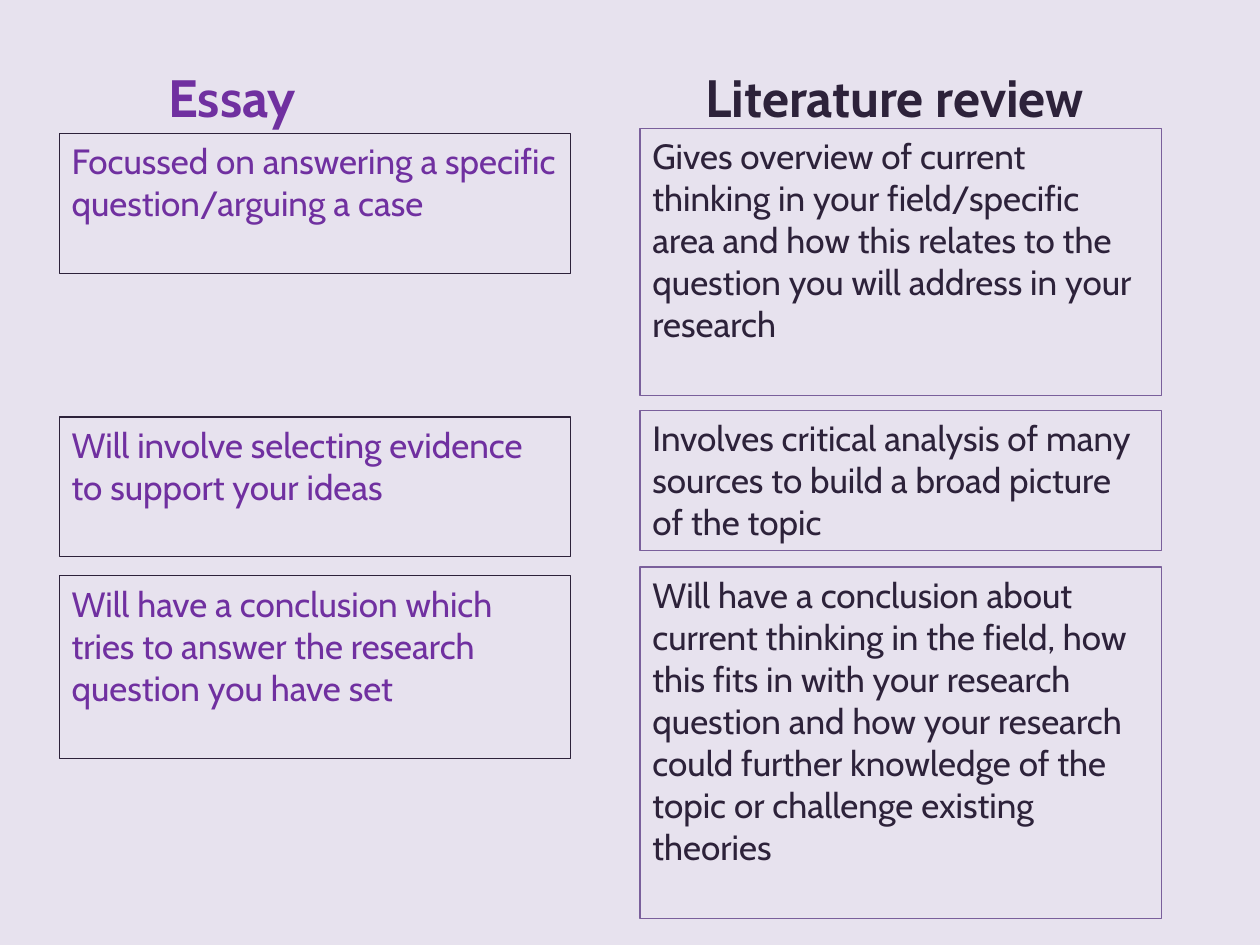
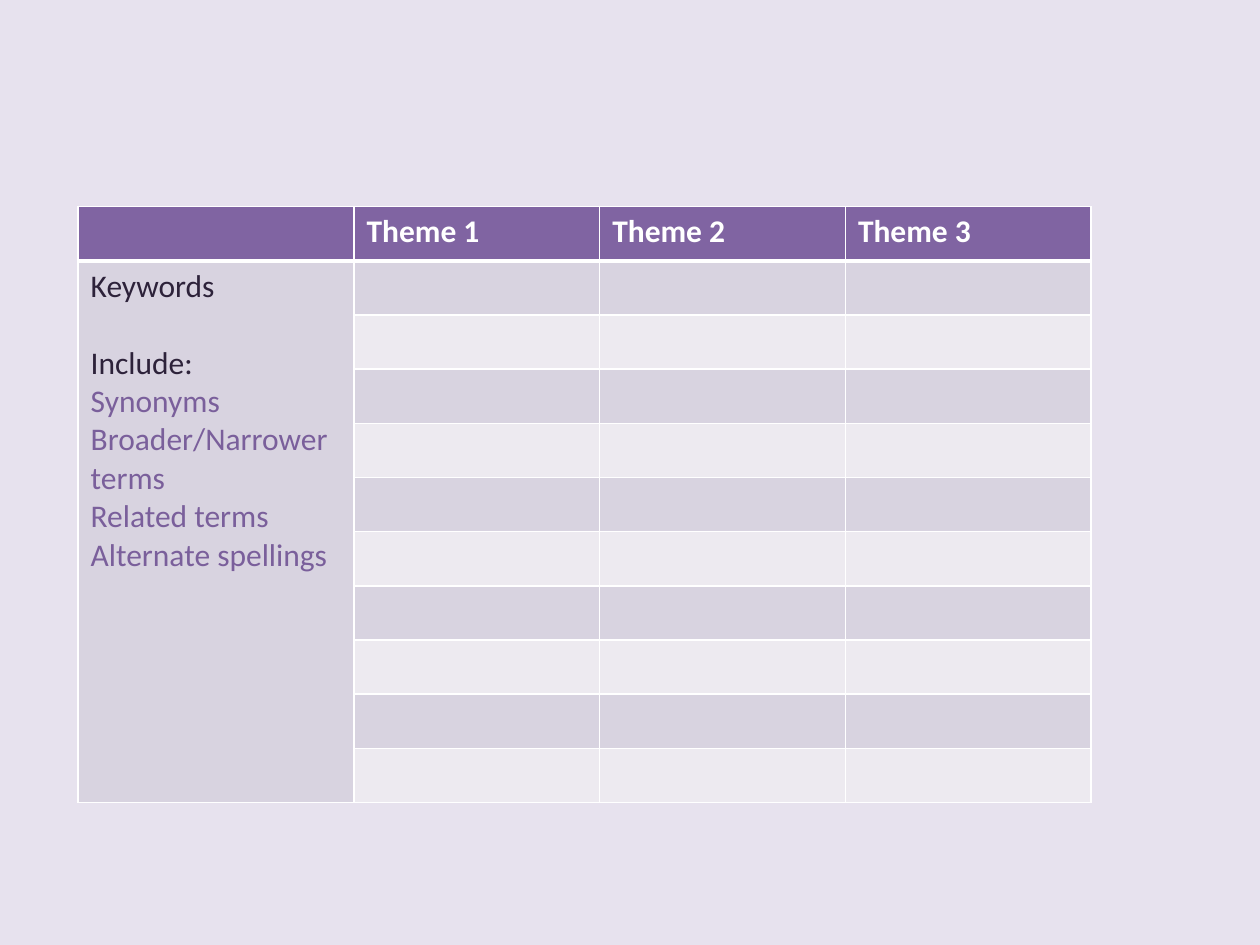
from dataclasses import dataclass

from lxml import etree
from pptx import Presentation
from pptx.dml.color import RGBColor
from pptx.enum.shapes import MSO_SHAPE
from pptx.enum.text import MSO_ANCHOR, PP_ALIGN
from pptx.oxml.ns import qn
from pptx.util import Inches, Pt

RECTANGLE = MSO_SHAPE.RECTANGLE
TOP = MSO_ANCHOR.TOP
LEFT, CENTER = PP_ALIGN.LEFT, PP_ALIGN.CENTER
BLANK_LAYOUT = 6


@dataclass(frozen=True)
class Theme:
    """Colours, fonts and type sizes shared by the slides."""
    background: str = "E7E2EE"
    ink: str = "2D223A"
    purple: str = "7030A0"
    accent: str = "7A5F9B"
    header: str = "8064A2"
    band_dark: str = "D8D3E0"
    band_light: str = "EDEAF0"
    white: str = "FFFFFF"
    box_font: str = "Cabin"
    table_font: str = "Calibri"
    heading_size: int = 30
    box_size: int = 20
    table_size: int = 18
    outline: float = 0.75
    border: int = 1
    header_border: int = 3


THEME = Theme()


@dataclass(frozen=True)
class Column:
    """One side of the comparison; boxes hold top, height and text."""
    heading: str
    heading_left: float
    heading_width: float
    left: float
    width: float
    text_color: str
    line_color: str
    boxes: tuple


ESSAY = Column("Essay", 1.17, 1.34, 0.47, 4.06, THEME.purple, THEME.ink, (
    (1.06, 1.11, "Focussed on answering a specific question/arguing a case"),
    (3.31, 1.11, "Will involve selecting evidence to support your ideas"),
    (4.57, 1.45, "Will have a conclusion which tries to answer the research "
                 "question you have set"),
))
REVIEW = Column("Literature review", 5.16, 3.88, 5.08, 4.14, THEME.ink, THEME.accent, (
    (1.02, 2.12, "Gives overview of current thinking in your field/specific area "
                 "and how this relates to the question you will address in your research"),
    (3.26, 1.11, "Involves critical analysis of many sources to build a broad "
                 "picture of the topic"),
    (4.5, 2.79, "Will have a conclusion about current thinking in the field, how "
                "this fits in with your research question and how your research could "
                "further knowledge of the topic or challenge existing theories"),
))
TABLE_HEADINGS = ("", "Theme 1", "Theme 2", "Theme 3")
COLUMN_WIDTHS = (2.19, 1.95, 1.95, 1.95)
ROW_COUNT, ROW_HEIGHT = 11, 0.43
KEYWORD_LINES = (
    ("Keywords", THEME.ink),
    ("Include:", THEME.ink),
    ("Synonyms", THEME.accent),
    ("Broader/Narrower terms", THEME.accent),
    ("Related terms", THEME.accent),
    ("Alternate spellings", THEME.accent),
)


def rgb(color):
    """Turn a hex string into a colour."""
    return RGBColor.from_string(color)


def add_run(paragraph, text, font, size, color, bold=False):
    """Add a formatted run to a paragraph."""
    run = paragraph.add_run()
    run.text = text
    run.font.name = font
    run.font.size = Pt(size)
    run.font.color.rgb = rgb(color)
    run.font.bold = bold


def add_heading(slide, column):
    """Add the heading above a comparison column."""
    shape = slide.shapes.add_textbox(Inches(column.heading_left), Inches(0.47),
                                     Inches(column.heading_width), Inches(0.61))
    shape.text_frame.word_wrap = False
    paragraph = shape.text_frame.paragraphs[0]
    paragraph.alignment = CENTER
    add_run(paragraph, column.heading, THEME.box_font, THEME.heading_size,
            column.text_color, bold=True)


def add_box(slide, column, top, height, text):
    """Add an outlined statement to a comparison column."""
    shape = slide.shapes.add_shape(RECTANGLE, Inches(column.left), Inches(top),
                                   Inches(column.width), Inches(height))
    shape.shadow.inherit = False
    shape.fill.background()
    shape.line.color.rgb = rgb(column.line_color)
    shape.line.width = Pt(THEME.outline)
    shape.text_frame.word_wrap = True
    shape.text_frame.vertical_anchor = TOP
    paragraph = shape.text_frame.paragraphs[0]
    paragraph.alignment = LEFT
    add_run(paragraph, text, THEME.box_font, THEME.box_size, column.text_color)


def style_cell(cell, fill, top_border, bottom_border):
    """Give a cell its white borders and its fill."""
    properties = cell._tc.get_or_add_tcPr()
    widths = {"L": THEME.border, "R": THEME.border, "T": top_border, "B": bottom_border}
    for side, width in widths.items():
        line = etree.SubElement(properties, qn(f"a:ln{side}"), w=str(Pt(width)))
        solid = etree.SubElement(line, qn("a:solidFill"))
        etree.SubElement(solid, qn("a:srgbClr"), val=THEME.white)
    cell.fill.solid()
    cell.fill.fore_color.rgb = rgb(fill)


def row_style(row, column):
    """Return the fill, top border and bottom border of a cell."""
    if row == 0:
        return THEME.header, THEME.border, THEME.header_border
    fill = THEME.band_dark if column == 0 or row % 2 else THEME.band_light
    return fill, THEME.header_border if row == 1 else THEME.border, THEME.border


def fill_keywords(cell):
    """Write the keyword guidance into the merged cell."""
    frame = cell.text_frame
    for index, (text, color) in enumerate(KEYWORD_LINES):
        paragraph = frame.add_paragraph() if index else frame.paragraphs[0]
        if index == 1:
            paragraph.space_before = Pt(22)
        add_run(paragraph, text, THEME.table_font, THEME.table_size, color)


def add_keyword_table(slide):
    """Add the table of keywords by theme."""
    frame = slide.shapes.add_table(ROW_COUNT, len(COLUMN_WIDTHS), Inches(0.62), Inches(1.64),
                                   Inches(sum(COLUMN_WIDTHS)), Inches(ROW_COUNT * ROW_HEIGHT))
    table = frame.table
    table.horz_banding = False
    for column, width in zip(table.columns, COLUMN_WIDTHS):
        column.width = Inches(width)
    for row_index, row in enumerate(table.rows):
        row.height = Inches(ROW_HEIGHT)
        for column_index, cell in enumerate(row.cells):
            style_cell(cell, *row_style(row_index, column_index))
    for cell, heading in zip(table.rows[0].cells, TABLE_HEADINGS):
        if heading:
            add_run(cell.text_frame.paragraphs[0], heading, THEME.table_font,
                    THEME.table_size, THEME.white, bold=True)
    keywords = table.cell(1, 0)
    keywords.merge(table.cell(ROW_COUNT - 1, 0))
    fill_keywords(keywords)


def add_slide(presentation):
    """Add a blank slide."""
    return presentation.slides.add_slide(presentation.slide_layouts[BLANK_LAYOUT])


def main():
    """Build and save the presentation."""
    presentation = Presentation()
    presentation.slide_width = Inches(10)
    presentation.slide_height = Inches(7.5)
    background = presentation.slide_master.background.fill
    background.solid()
    background.fore_color.rgb = rgb(THEME.background)

    comparison = add_slide(presentation)
    for column in (ESSAY, REVIEW):
        add_heading(comparison, column)
        for top, height, text in column.boxes:
            add_box(comparison, column, top, height, text)

    add_keyword_table(add_slide(presentation))
    presentation.save("out.pptx")


if __name__ == "__main__":
    main()
